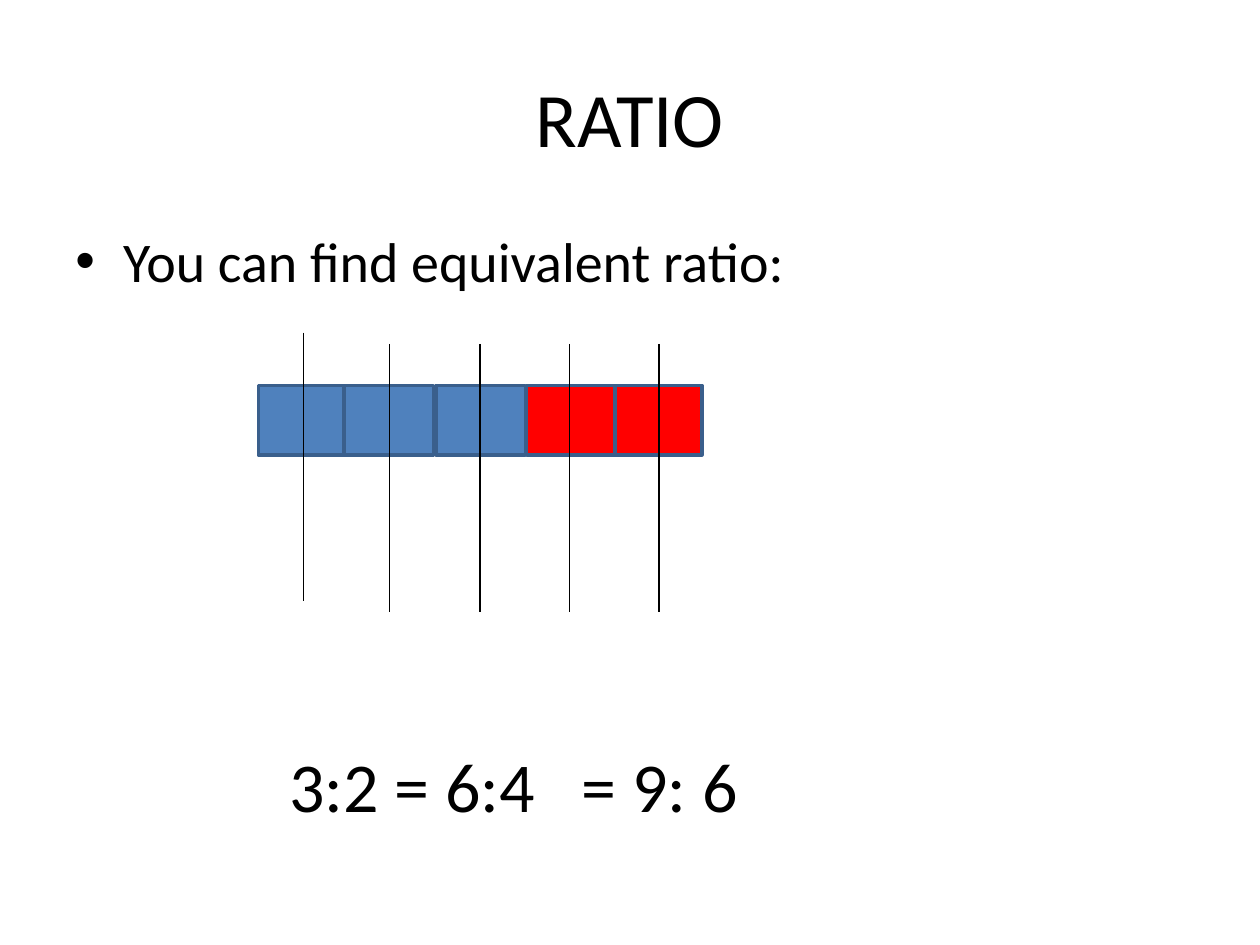
from lxml.etree import SubElement
from pptx import Presentation
from pptx.dml.color import RGBColor
from pptx.enum.shapes import MSO_CONNECTOR as Connector, MSO_SHAPE as Shape
from pptx.enum.text import MSO_ANCHOR as Anchor, PP_ALIGN as Align
from pptx.oxml.ns import qn
from pptx.util import Inches, Pt

BLACK, BLUE, RED, OUTLINE = "000000", "4F81BD", "FF0000", "3A5F8C"


def color(hex_string):
    return RGBColor.from_string(hex_string)


class SlideBuilder:
    """Holds the current slide and its text style."""

    font = "Calibri"

    def __init__(self, slide):
        self.slide = slide

    def text(self, text, left, top, width, height, size,
             align=Align.LEFT, anchor=Anchor.TOP):
        box = self.slide.shapes.add_textbox(
            Inches(left), Inches(top), Inches(width), Inches(height))
        frame = box.text_frame
        frame.word_wrap = True
        frame.vertical_anchor = anchor
        paragraph = frame.paragraphs[0]
        paragraph.text = text
        paragraph.alignment = align
        paragraph.font.name = self.font
        paragraph.font.size = Pt(size)
        paragraph.font.color.rgb = color(BLACK)
        return paragraph

    def bullet(self, text, left, top, width, height, size, indent=0.38):
        paragraph = self.text(text, left, top, width, height, size)
        properties = paragraph._p.get_or_add_pPr()
        properties.set("marL", str(Inches(indent)))
        properties.set("indent", str(-Inches(indent)))
        SubElement(properties, qn("a:buFont"), typeface="Arial")
        SubElement(properties, qn("a:buChar"), char="•")

    def block(self, left, top, width, height, fill):
        shape = self.slide.shapes.add_shape(
            Shape.RECTANGLE, Inches(left), Inches(top), Inches(width), Inches(height))
        shape.shadow.inherit = False
        shape.fill.solid()
        shape.fill.fore_color.rgb = color(fill)
        shape.line.color.rgb = color(OUTLINE)
        shape.line.width = Pt(2)

    def vertical_line(self, x, top, length):
        line = self.slide.shapes.add_connector(
            Connector.STRAIGHT, Inches(x), Inches(top), Inches(x), Inches(top + length))
        line.line.color.rgb = color(BLACK)
        line.line.width = Pt(0.75)
        SubElement(line._element.spPr, qn("a:effectLst"))


def main():
    presentation = Presentation()
    presentation.slide_width = Inches(10)
    presentation.slide_height = Inches(7.5)
    builder = SlideBuilder(
        presentation.slides.add_slide(presentation.slide_layouts[6]))

    builder.text("RATIO", 0.5, 0.3, 9, 1.25, 44, Align.CENTER, Anchor.MIDDLE)
    builder.bullet("You can find equivalent ratio:", 0.5, 1.75, 9, 1.21, 32)

    blocks = [(2.05, 0.71, BLUE), (2.73, 0.71, BLUE), (3.46, 0.71, BLUE),
              (4.18, 0.71, RED), (4.88, 0.69, RED)]
    for left, width, fill in blocks:
        builder.block(left, 3.06, width, 0.55, fill)

    dividers = [(2.41, 2.64), (3.09, 2.73), (3.81, 2.73), (4.52, 2.73), (5.23, 2.73)]
    for x, top in dividers:
        builder.vertical_line(x, top, 2.13)

    for ratio, left, width in [("3:2 = 6:4", 2.2, 3.94), ("= 9: 6", 4.52, 3.23)]:
        builder.text(ratio, left, 5.84, width, 0.77, 40)

    presentation.save("out.pptx")


if __name__ == "__main__":
    main()
